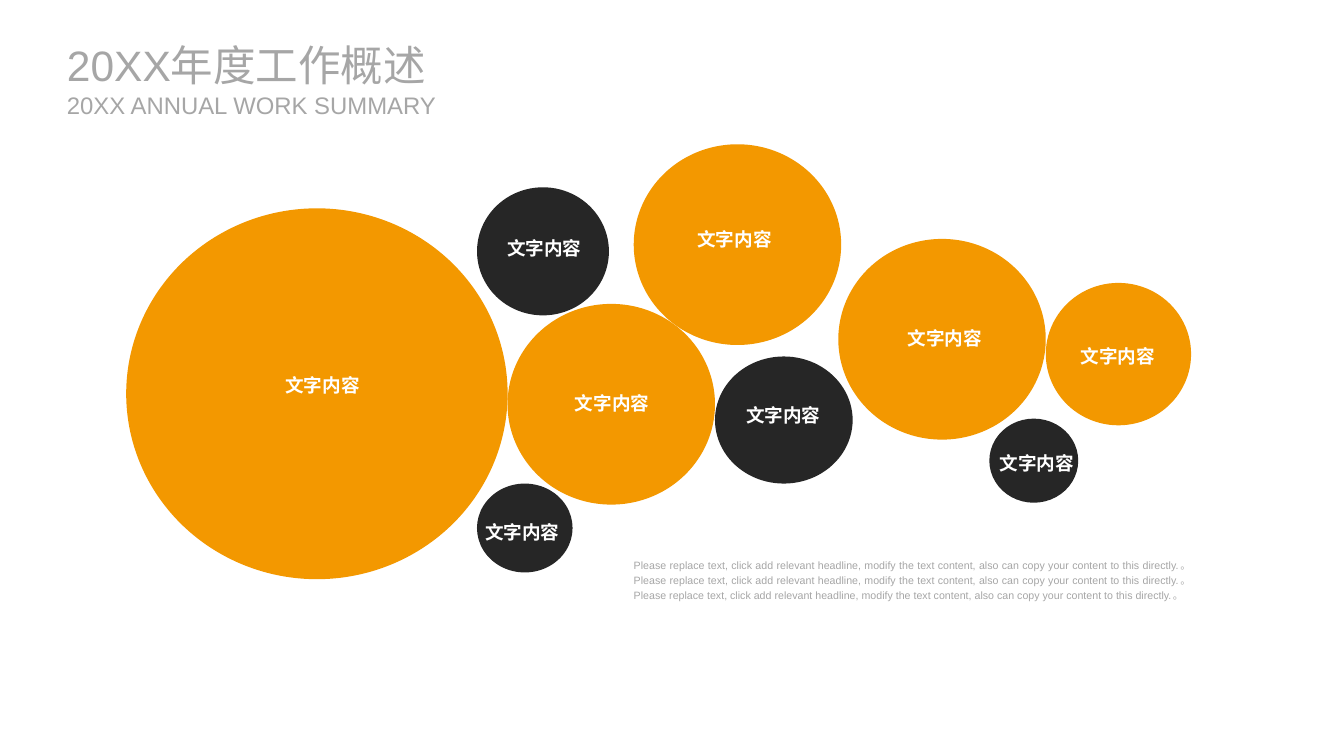
import pptx
import pptx.util
import pptx.dml.color
import pptx.enum.shapes
import pptx.enum.text

Inches = pptx.util.Inches
Align = pptx.enum.text.PP_ALIGN
AutoSize = pptx.enum.text.MSO_AUTO_SIZE

ORANGE, BLACK, WHITE, GRAY = "F39800", "262626", "FFFFFF", "A6A6A6"
LEFT_MARGIN, HEADING_WIDTH = 0.7, 3.91
LABEL_WIDTH, LABEL_HEIGHT = 0.99, 0.36


def color(hex_string):
    return pptx.dml.color.RGBColor.from_string(hex_string)


def write(shape, text, size, hex_string, align=Align.LEFT, spacing=1.0,
          bold=False, wrap=True, inset=0):
    frame = shape.text_frame
    frame.word_wrap = wrap
    frame.auto_size = AutoSize.SHAPE_TO_FIT_TEXT
    frame.vertical_anchor = pptx.enum.text.MSO_ANCHOR.TOP
    frame.margin_left = frame.margin_right = Inches(inset)
    frame.margin_top = frame.margin_bottom = Inches(inset / 2)
    paragraph = frame.paragraphs[0]
    paragraph.alignment = align
    paragraph.line_spacing = spacing
    run = paragraph.add_run()
    run.text = text
    run.font.name = "Arial"
    run.font.size = pptx.util.Pt(size)
    run.font.bold = bold
    run.font.color.rgb = color(hex_string)


presentation = pptx.Presentation()
presentation.slide_width = Inches(14.06)
presentation.slide_height = Inches(7.91)
slide = presentation.slides.add_slide(presentation.slide_layouts[5])

# Circles and their labels: left, top, width, height, fill, label left, label top
bubbles = [
    (1.32, 2.18, 3.99, 3.88, ORANGE, 2.88, 3.82),
    (4.99, 1.96, 1.38, 1.34, BLACK, 5.20, 2.38),
    (5.31, 3.18, 2.17, 2.10, ORANGE, 5.91, 4.00),
    (4.99, 5.06, 1.00, 0.93, BLACK, 4.97, 5.35),
    (6.63, 1.51, 2.17, 2.10, ORANGE, 7.19, 2.29),
    (7.48, 3.73, 1.44, 1.33, BLACK, 7.70, 4.13),
    (8.77, 2.50, 2.17, 2.10, ORANGE, 9.39, 3.33),
    (10.35, 4.38, 0.93, 0.88, BLACK, 10.35, 4.63),
    (10.94, 2.96, 1.52, 1.49, ORANGE, 11.20, 3.51),
]
circles = slide.shapes.add_group_shape()
labels = slide.shapes.add_group_shape()
for left, top, width, height, fill, label_left, label_top in bubbles:
    circle = circles.shapes.add_shape(
        pptx.enum.shapes.MSO_SHAPE.OVAL,
        Inches(left), Inches(top), Inches(width), Inches(height))
    circle.shadow.inherit = False
    circle.fill.solid()
    circle.fill.fore_color.rgb = color(fill)
    circle.line.fill.background()
    label = labels.shapes.add_textbox(
        Inches(label_left), Inches(label_top), Inches(LABEL_WIDTH), Inches(LABEL_HEIGHT))
    write(label, "文字内容", 14, WHITE, Align.CENTER, 1.2, bold=True, wrap=False, inset=0.1)

# Description
sentence = ("Please replace text, click add relevant headline, modify the text content, "
            "also can copy your content to this directly.。")
description = slide.shapes.add_textbox(Inches(6.63), Inches(5.82), Inches(5.83), Inches(0.47))
write(description, sentence * 3, 8, GRAY, Align.JUSTIFY, 1.2)

# Title and subtitle
title = slide.shapes.title
title.left, title.top = Inches(LEFT_MARGIN), Inches(0.41)
title.width, title.height = Inches(HEADING_WIDTH), Inches(0.54)
write(title, "20XX年度工作概述", 32, GRAY)
subtitle = slide.shapes.add_textbox(
    Inches(LEFT_MARGIN), Inches(0.95), Inches(HEADING_WIDTH), Inches(0.3))
write(subtitle, "20XX ANNUAL WORK SUMMARY", 18, GRAY)

presentation.save("out.pptx")
